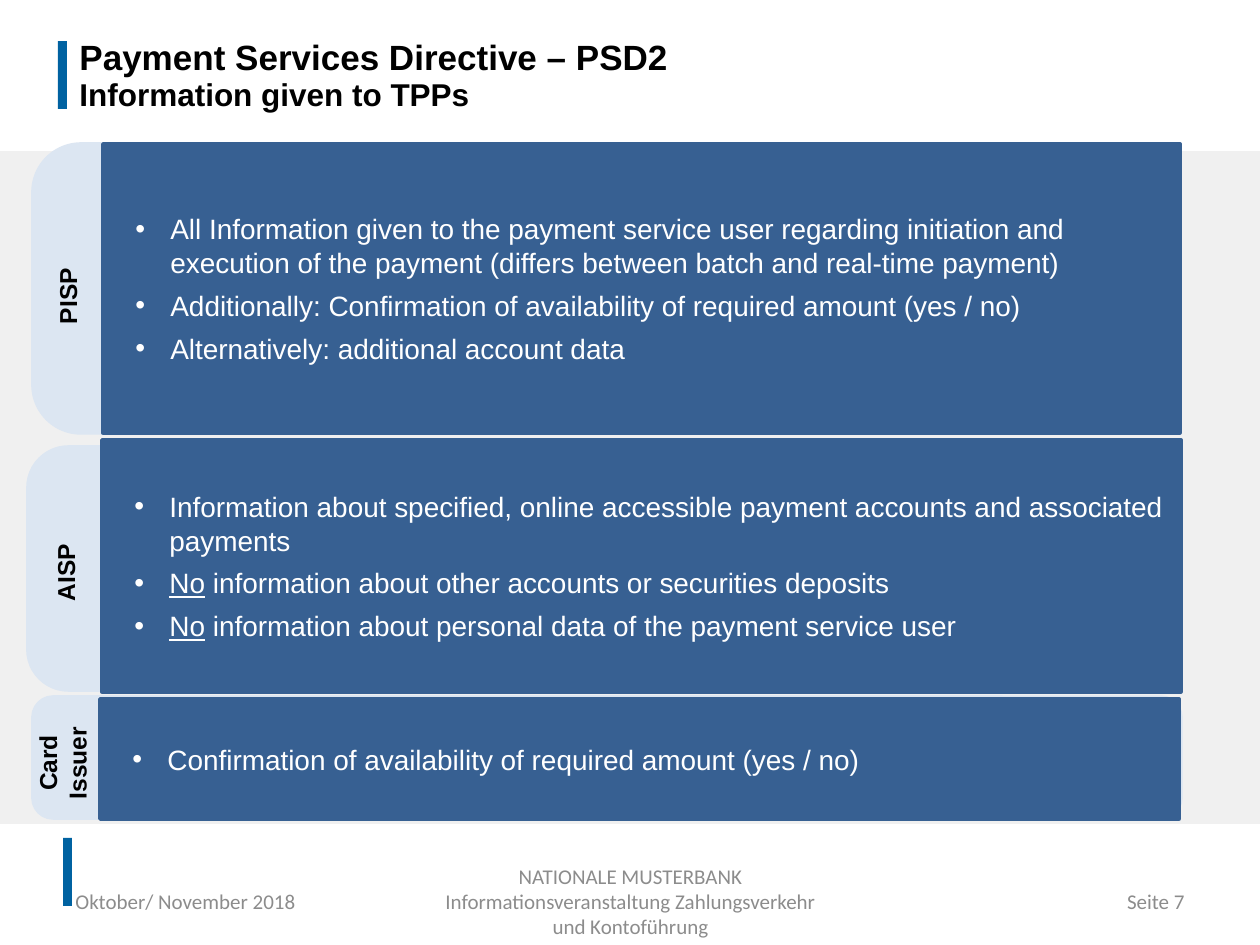
from dataclasses import dataclass

from lxml.etree import SubElement
from pptx import Presentation
from pptx.dml.color import RGBColor
from pptx.enum.shapes import MSO_SHAPE
from pptx.enum.text import MSO_ANCHOR, PP_ALIGN
from pptx.oxml.ns import qn
from pptx.shapes.autoshape import Shape
from pptx.slide import Slide
from pptx.text.text import TextFrame, _Paragraph
from pptx.util import Emu, Pt

PX = 914400 / 126
PALE_BLUE = "DCE6F2"
DARK_BLUE = "376092"
ACCENT_BLUE = "0062A1"
LIGHT_GRAY = "F0F0F0"
FOOTER_GRAY = "8C8C8C"
BLACK = "000000"
WHITE = "FFFFFF"


@dataclass(frozen=True)
class Box:
    left: int
    top: int
    width: int
    height: int

    def emu(self) -> tuple[Emu, ...]:
        return tuple(px(n) for n in (self.left, self.top, self.width, self.height))


@dataclass(frozen=True)
class Span:
    text: str
    underline: bool = False


@dataclass(frozen=True)
class Section:
    label: str
    panel: Box
    body: Box
    label_box: Box
    bullets: tuple[tuple[Span, ...], ...]


@dataclass(frozen=True)
class Footer:
    text: str
    box: Box
    alignment: PP_ALIGN


NO = Span("No", underline=True)

SECTIONS = (
    Section(
        "PISP", Box(33, 144, 1109, 289), Box(103, 144, 1077, 289), Box(-69, 275, 273, 42),
        (
            (Span("All Information given to the payment service user regarding initiation and "
                  "execution of the payment (differs between batch and real-time payment)"),),
            (Span("Additionally: Confirmation of availability of required amount (yes / no)"),),
            (Span("Alternatively: additional account data"),),
        ),
    ),
    Section(
        "AISP", Box(28, 447, 1111, 243), Box(102, 440, 1079, 252), Box(-39, 551, 210, 43),
        (
            (Span("Information about specified, online accessible payment accounts "
                  "and associated payments"),),
            (NO, Span(" information about other accounts or securities deposits")),
            (NO, Span(" information about personal data of the payment service user")),
        ),
    ),
    Section(
        "Card Issuer", Box(33, 697, 1148, 121), Box(100, 699, 1079, 120), Box(-3, 727, 131, 72),
        ((Span("Confirmation of availability of required amount (yes / no)"),),),
    ),
)

FOOTERS = (
    Footer("Oktober/ November 2018", Box(63, 876, 294, 50), PP_ALIGN.LEFT),
    Footer("NATIONALE MUSTERBANK Informationsveranstaltung Zahlungsverkehr und Kontoführung",
           Box(431, 876, 399, 50), PP_ALIGN.CENTER),
    Footer("Seite 7", Box(903, 876, 294, 50), PP_ALIGN.RIGHT),
)


def px(length: int) -> Emu:
    return Emu(round(length * PX))


def color(value: str) -> RGBColor:
    return RGBColor.from_string(value)


def add_run(paragraph: _Paragraph, span: Span, size: int, fill: str,
            font: str = "Arial", bold: bool = False) -> None:
    run = paragraph.add_run()
    run.text = span.text
    run.font.name = font
    run.font.size = Pt(size)
    run.font.bold = bold
    run.font.underline = span.underline
    run.font.color.rgb = color(fill)


def add_block(slide: Slide, kind: MSO_SHAPE, box: Box, fill: str, outlined: bool = False) -> Shape:
    shape = slide.shapes.add_shape(kind, *box.emu())
    shape.shadow.inherit = False
    shape.fill.solid()
    shape.fill.fore_color.rgb = color(fill)
    if outlined:
        shape.line.color.rgb = color(fill)
        shape.line.width = Pt(2)
    else:
        shape.line.fill.background()
    return shape


def add_text_box(slide: Slide, box: Box, anchor: MSO_ANCHOR, rotation: int = 0) -> TextFrame:
    shape = slide.shapes.add_textbox(*box.emu())
    shape.rotation = rotation
    frame = shape.text_frame
    frame.word_wrap = True
    frame.vertical_anchor = anchor
    return frame


def set_bullet(paragraph: _Paragraph) -> None:
    properties = paragraph._p.get_or_add_pPr()
    properties.set("marL", str(px(55)))
    properties.set("indent", str(px(-35)))
    SubElement(properties, qn("a:buFont"), typeface="Arial")
    SubElement(properties, qn("a:buChar"), char="•")


def add_section(slide: Slide, section: Section) -> None:
    add_block(slide, MSO_SHAPE.ROUNDED_RECTANGLE, section.panel, PALE_BLUE, outlined=True)
    body = add_block(slide, MSO_SHAPE.RECTANGLE, section.body, DARK_BLUE, outlined=True)
    frame = body.text_frame
    frame.word_wrap = True
    frame.vertical_anchor = MSO_ANCHOR.MIDDLE
    for index, spans in enumerate(section.bullets):
        paragraph = frame.add_paragraph() if index else frame.paragraphs[0]
        paragraph.alignment = PP_ALIGN.LEFT
        paragraph.space_before = Pt(5.3)
        set_bullet(paragraph)
        for span in spans:
            add_run(paragraph, span, 16, WHITE)
    label = add_text_box(slide, section.label_box, MSO_ANCHOR.TOP, rotation=270).paragraphs[0]
    label.alignment = PP_ALIGN.CENTER
    add_run(label, Span(section.label), 14, BLACK, bold=True)


def add_title(slide: Slide) -> None:
    frame = add_text_box(slide, Box(67, 33, 1118, 89), MSO_ANCHOR.MIDDLE)
    paragraph = frame.paragraphs[0]
    paragraph.line_spacing = Pt(20.4)
    add_run(paragraph, Span("Payment Services Directive – PSD2"), 20, BLACK, bold=True)
    paragraph.add_line_break()
    add_run(paragraph, Span("Information given to TPPs"), 18, BLACK, bold=True)


def add_footer(slide: Slide, footer: Footer) -> None:
    paragraph = add_text_box(slide, footer.box, MSO_ANCHOR.MIDDLE).paragraphs[0]
    paragraph.alignment = footer.alignment
    add_run(paragraph, Span(footer.text), 12, FOOTER_GRAY, font="Calibri")


def main() -> None:
    presentation = Presentation()
    presentation.slide_width = px(1260)
    presentation.slide_height = px(945)
    slide = presentation.slides.add_slide(presentation.slide_layouts[6])
    add_block(slide, MSO_SHAPE.RECTANGLE, Box(0, 151, 1260, 673), LIGHT_GRAY)
    for bar in (Box(58, 41, 9, 68), Box(63, 838, 9, 68)):
        add_block(slide, MSO_SHAPE.RECTANGLE, bar, ACCENT_BLUE)
    add_title(slide)
    for footer in FOOTERS:
        add_footer(slide, footer)
    for section in SECTIONS:
        add_section(slide, section)
    presentation.save("out.pptx")


if __name__ == "__main__":
    main()
